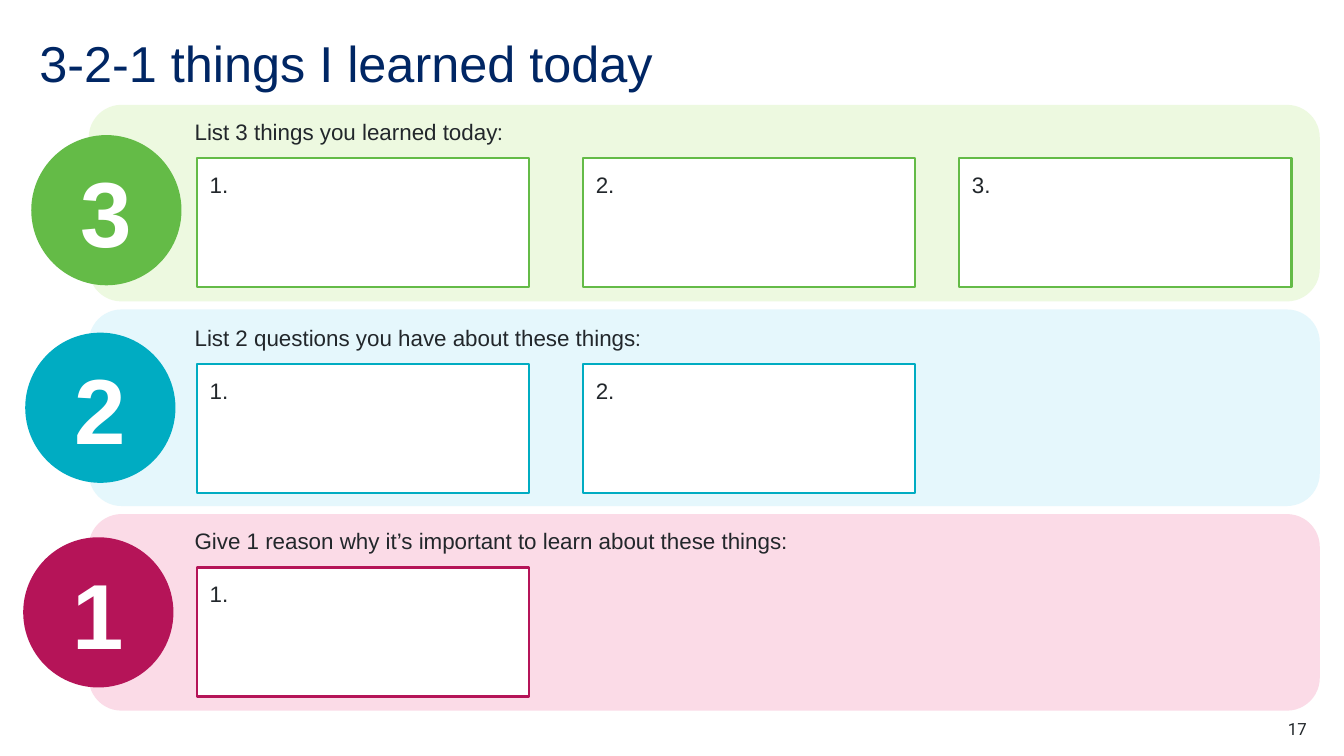
"""Build the 3-2-1 learning reflection slide."""
from pptx import Presentation
from pptx.dml.color import RGBColor
from pptx.enum.shapes import MSO_SHAPE
from pptx.enum.text import MSO_ANCHOR, PP_ALIGN

PX = 9144
RECT, ROUND, OVAL = MSO_SHAPE.RECTANGLE, MSO_SHAPE.ROUNDED_RECTANGLE, MSO_SHAPE.OVAL
TOP, MIDDLE = MSO_ANCHOR.TOP, MSO_ANCHOR.MIDDLE
LEFT, CENTER, RIGHT = PP_ALIGN.LEFT, PP_ALIGN.CENTER, PP_ALIGN.RIGHT
POINT = 12700
INK = "22272B"
ANSWER_LEFTS = [195, 578, 951]

deck = Presentation()
deck.slide_width, deck.slide_height = 1333 * PX, 750 * PX
slide = deck.slides.add_slide(deck.slide_layouts[6])


def add_panel(kind, box, fill, line=None):
    panel = slide.shapes.add_shape(kind, *(n * PX for n in box))
    panel.shadow.inherit = False
    panel.fill.solid()
    panel.fill.fore_color.rgb = RGBColor.from_string(fill)
    if line:
        panel.line.color.rgb = RGBColor.from_string(line)
        panel.line.width = int(1.5 * POINT)
    else:
        panel.line.fill.background()
    return panel


def write(shape, runs, size, color, inset=0, align=LEFT, anchor=TOP, bold=False):
    frame = shape.text_frame
    layout = {"word_wrap": True, "vertical_anchor": anchor, "margin_left": inset * PX,
              "margin_right": inset * PX, "margin_top": inset * PX, "margin_bottom": inset * PX}
    for key, value in layout.items():
        setattr(frame, key, value)
    paragraph = frame.paragraphs[0]
    paragraph.alignment = align
    for words, font_name in runs:
        run = paragraph.add_run()
        run.text = words
        for key, value in {"name": font_name, "size": size * POINT, "bold": bold}.items():
            setattr(run.font, key, value)
        run.font.color.rgb = RGBColor.from_string(color)
    return paragraph


sections = [
    {"count": 3, "band": (104, "EDF9E0"), "color": "64BB47", "badge": (31, 134),
     "prompt": (104, 478), "answers": 157,
     "runs": [("List 3 things you learned today", "Arial"), (":", "Montserrat")]},
    {"count": 2, "band": (307, "E5F7FC"), "color": "00ACC2", "badge": (25, 330),
     "prompt": (309, 478), "answers": 361,
     "runs": [("List 2 questions you have about these things", "Arial"), (":", "Montserrat")]},
    {"count": 1, "band": (510, "FBDBE7"), "color": "B51458", "badge": (23, 533),
     "prompt": (510, 665), "answers": 563,
     "runs": [("Give 1 reason why it’s important to learn about these things:", "Arial")]},
]

for section in sections:
    band_top, tint = section["band"]
    add_panel(ROUND, (88, band_top, 1221, 195), tint)

page_number = slide.shapes.add_textbox(1217 * PX, 713 * PX, 79 * PX, 20 * PX)
write(page_number, [("17", "Roboto")], 12, INK, align=RIGHT)

title = slide.shapes.add_textbox(39 * PX, 39 * PX, 1256 * PX, 60 * PX)
heading = write(title, [("3-2-1 things I learned today", "Arial")], 36, "002664")
heading.line_spacing = 0.9

for section in sections:
    prompt_top, prompt_width = section["prompt"]
    prompt = slide.shapes.add_textbox(180 * PX, prompt_top * PX, prompt_width * PX, 61 * PX)
    write(prompt, section["runs"], 16, INK, inset=13)
    for number, left in enumerate(ANSWER_LEFTS[:section["count"]], 1):
        answer = add_panel(RECT, (left, section["answers"], 330, 128), "FFFFFF", section["color"])
        write(answer, [(f"{number}.", "Arial")], 16, INK, inset=13)
    badge = add_panel(OVAL, (*section["badge"], 149, 149), section["color"])
    write(badge, [(str(section["count"]), "Arial")], 66, "FFFFFF", inset=5,
          align=CENTER, anchor=MIDDLE, bold=True)

deck.save("out.pptx")
